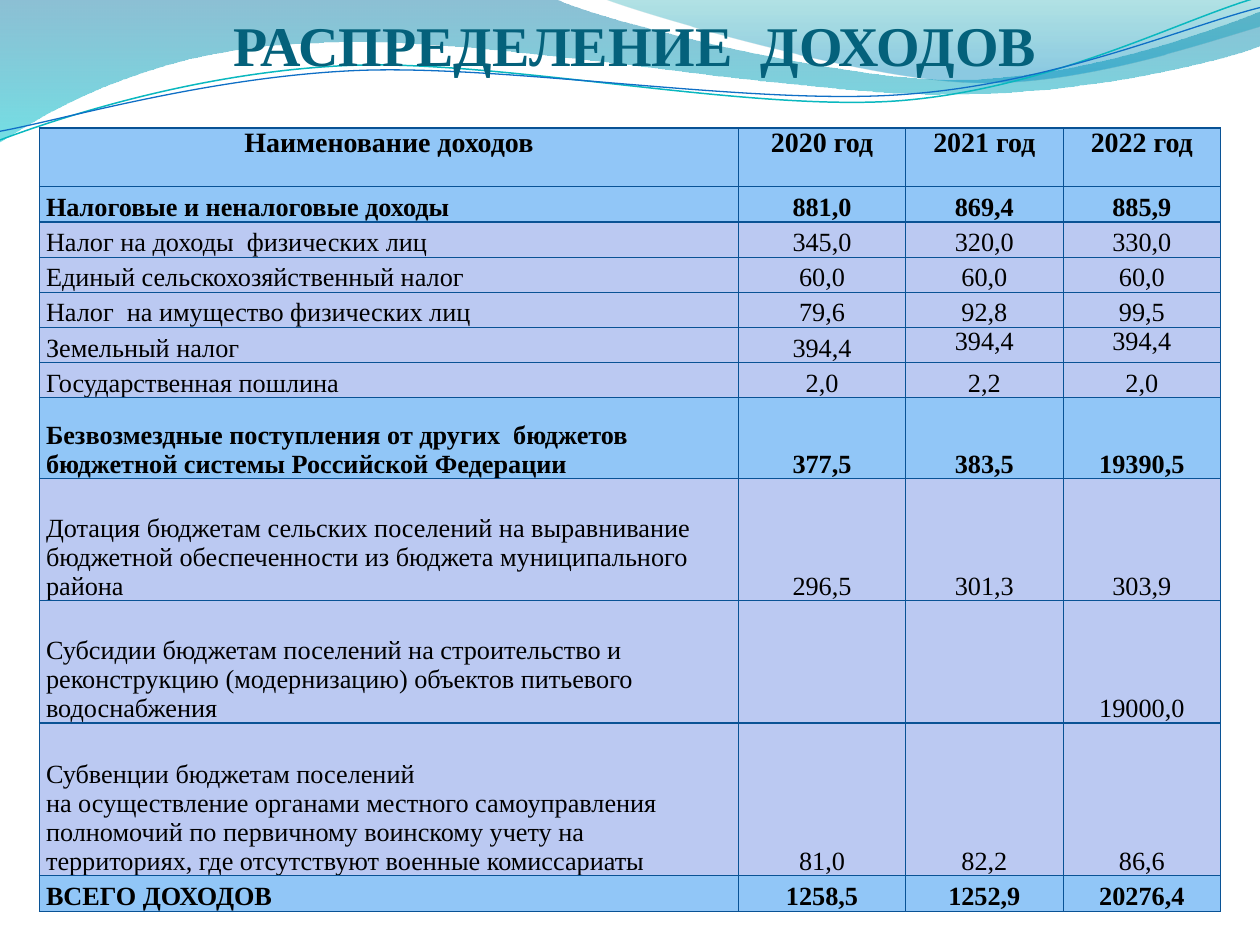
from math import cos, radians, sin

from lxml import etree
from pptx import Presentation
from pptx.dml.color import RGBColor
from pptx.enum.text import MSO_ANCHOR, MSO_AUTO_SIZE, PP_ALIGN
from pptx.oxml.ns import qn
from pptx.util import Pt

LEFT, CENTER = PP_ALIGN.LEFT, PP_ALIGN.CENTER
TOP, BOTTOM = MSO_ANCHOR.TOP, MSO_ANCHOR.BOTTOM
NO_AUTOFIT = MSO_AUTO_SIZE.NONE

FONT = "Times New Roman"
BLACK = RGBColor(0x00, 0x00, 0x00)
TITLE_TEAL = RGBColor(0x04, 0x61, 0x7B)
TOTAL_BLUE = RGBColor(0x91, 0xC6, 0xF7)
ITEM_BLUE = RGBColor(0xBB, 0xC9, 0xF2)
BORDER_BLUE = RGBColor(0x09, 0x52, 0x95)
WAVE_BLUE = RGBColor(0x00, 0x74, 0xA1)
WAVE_CYAN = RGBColor(0x00, 0xC6, 0xCF)
WAVE_TEAL = RGBColor(0x00, 0xA1, 0xA9)
WAVE_SKY = RGBColor(0x00, 0x8B, 0xBF)
LINE_TEAL = RGBColor(0x0A, 0xB8, 0xBF)
LINE_BLUE = RGBColor(0x0F, 0x6F, 0xC6)
LINE_TILT = 357.3

# Boxes and outlines in points: a pair is a straight step, six numbers a Bezier step.
# Gradient stops are (position, colour, opacity in percent).
WAVES = [
    ((-0.7, -0.7, 721.4, 82.1),
     [(0, 0), (317, -0.7), (343, 12, 478, 45.4, 546, 45.4),
      (614, 45.4, 690, 18.7, 720, 6.5), (720.7, 26),
      (708, 31.7, 626, 54.7, 537, 54), (448, 54, 275, 20, 185, 24.5),
      (93, 26, 33, 60, -0.7, 81.4)],
     [(0, WAVE_BLUE, 45), (1, WAVE_CYAN, 55)]),
    ((345, -0.7, 375, 50.4),
     [(345, -0.7), (366.5, 8, 491, 44.6, 553.7, 46.8),
      (616, 49.7, 692, 23, 720, 15), (720, 0)],
     [(0, WAVE_TEAL, 30), (0.8, WAVE_SKY, 45)]),
]
WAVE_LINES = [
    ((-1.4, 15.8, 721.4, 51.1),
     [(0, 80), (34.6, 67, 114, 41, 199.4, 37.4),
      (284.4, 33.8, 427, 64, 513.4, 57.6), (600, 51, 675.4, 10.8, 718.6, -1.4)],
     LINE_TEAL, 0.85),
    ((-1.4, 21.6, 722.2, 41.8),
     [(0, 75), (33.8, 69, 118, 44, 203.8, 40.3),
      (290, 36.7, 430, 60.5, 516, 54), (602, 48, 677.5, 15, 720, 4.3)],
     LINE_BLUE, 0.75),
]

COLUMN_WIDTHS = [399.5, 95.5, 90, 90]
LINE_ROW = 20.1
# (row height, shown as a total, texts)
ROWS = [
    (33.7, True, ["Наименование доходов", "2020 год", "2021 год", "2022 год"]),
    (LINE_ROW, True, ["Налоговые и неналоговые доходы", "881,0", "869,4", "885,9"]),
    (LINE_ROW, False, ["Налог на доходы  физических лиц", "345,0", "320,0", "330,0"]),
    (LINE_ROW, False, ["Единый сельскохозяйственный налог", "60,0", "60,0", "60,0"]),
    (LINE_ROW, False, ["Налог  на имущество физических лиц", "79,6", "92,8", "99,5"]),
    (LINE_ROW, False, ["Земельный налог", "394,4", "394,4", "394,4"]),
    (LINE_ROW, False, ["Государственная пошлина", "2,0", "2,2", "2,0"]),
    (46.2, True, ["Безвозмездные поступления от других  бюджетов "
                  "бюджетной системы Российской Федерации",
                  "377,5", "383,5", "19390,5"]),
    (69.8, False, ["Дотация бюджетам сельских поселений на выравнивание бюджетной "
                   "обеспеченности из бюджета муниципального района",
                   "296,5", "301,3", "303,9"]),
    (69.8, False, ["Субсидии бюджетам поселений на строительство и реконструкцию "
                   "(модернизацию) объектов питьевого водоснабжения",
                   "", "", "19000,0"]),
    (87.4, False, ["Субвенции бюджетам поселений\n"
                   "на осуществление органами местного самоуправления полномочий "
                   "по первичному воинскому учету на территориях, "
                   "где отсутствуют военные комиссариаты",
                   "81,0", "82,2", "86,6"]),
    (LINE_ROW, True, ["ВСЕГО ДОХОДОВ", "1258,5", "1252,9", "20276,4"]),
]
TOP_ANCHORED = {(0, column) for column in range(4)} | {(5, 2), (5, 3)}


def write_text(frame, text, size=15, color=BLACK, bold=False, align=LEFT):
    frame.text = text
    for paragraph in frame.paragraphs:
        paragraph.alignment = align
        for part in (paragraph, *paragraph.runs):
            part.font.name, part.font.size, part.font.bold = FONT, Pt(size), bold
            part.font.color.rgb = color


def to_local(point, box, rotation):
    """Move a slide point into the unrotated box of its shape."""
    left, top, width, height = box
    dx, dy = point[0] - left - width / 2, point[1] - top - height / 2
    angle = radians(-rotation)
    return (dx * cos(angle) - dy * sin(angle) + width / 2,
            dx * sin(angle) + dy * cos(angle) + height / 2)


def add_outline(slide, box, outline, close, rotation=0):
    """Add a freeform whose six-number steps become true Bezier curves."""
    builder = slide.shapes.build_freeform(*outline[0], scale=Pt(1))
    builder.add_line_segments([step[-2:] for step in outline[1:]], close=close)
    shape = builder.convert_to_shape()
    shape.left, shape.top, shape.width, shape.height = (Pt(side) for side in box)
    shape.rotation = rotation
    shape.shadow.inherit = False

    path = next(shape.element.iter(qn("a:path")))
    path.set("w", str(Pt(box[2])))
    path.set("h", str(Pt(box[3])))
    commands = [node for node in path if node.tag != qn("a:close")]
    for command, step in zip(commands, outline):
        for old_point in list(command):
            command.remove(old_point)
        if len(step) == 6:
            command = replace_with_curve(path, command)
        for i in range(0, len(step), 2):
            x, y = to_local(step[i:i + 2], box, rotation)
            etree.SubElement(command, qn("a:pt"), x=str(Pt(x)), y=str(Pt(y)))
    return shape


def replace_with_curve(path, command):
    curve = etree.SubElement(path, qn("a:cubicBezTo"))
    path.replace(command, curve)
    return curve


def add_wave(slide, box, outline, stops):
    wave = add_outline(slide, box, outline, close=True)
    wave.line.fill.background()
    wave.fill.gradient()
    wave.fill.gradient_angle = 270
    for stop, (position, color, _) in zip(wave.fill.gradient_stops, stops):
        stop.position = position
        stop.color.rgb = color
    colors = wave.element.spPr.iter(qn("a:srgbClr"))
    for color_element, (_, _, opacity) in zip(colors, stops):
        etree.SubElement(color_element, qn("a:alpha"), val=str(opacity * 1000))


def add_wave_line(slide, box, outline, color, width):
    line = add_outline(slide, box, outline, close=False, rotation=LINE_TILT)
    line.fill.background()
    line.line.color.rgb = color
    line.line.width = Pt(width)


def place_title(slide, text):
    title = slide.shapes.title
    title.left, title.top, title.width, title.height = Pt(36), Pt(16.6), Pt(654), Pt(28)
    frame = title.text_frame
    frame.margin_left = frame.margin_right = frame.margin_bottom = 0
    frame.margin_top = Pt(3.6)
    frame.word_wrap = True
    frame.auto_size = NO_AUTOFIT
    frame.vertical_anchor = BOTTOM
    write_text(frame, text, size=32, color=TITLE_TEAL, bold=True, align=CENTER)
    # Bring the title in front of the waves.
    title.element.getparent().append(title.element)


def add_borders(cell):
    properties = cell._tc.get_or_add_tcPr()
    for side in ("lnL", "lnR", "lnT", "lnB"):
        border = etree.SubElement(properties, qn("a:" + side), w=str(Pt(0.75)))
        fill = etree.SubElement(border, qn("a:solidFill"))
        etree.SubElement(fill, qn("a:srgbClr"), val=str(BORDER_BLUE))


def add_income_table(slide):
    heights = [height for height, _, _ in ROWS]
    table = slide.shapes.add_table(
        len(ROWS), len(COLUMN_WIDTHS), Pt(22.5), Pt(73.1),
        Pt(sum(COLUMN_WIDTHS)), Pt(sum(heights))).table
    for column, width in zip(table.columns, COLUMN_WIDTHS):
        column.width = Pt(width)
    for r, (height, is_total, texts) in enumerate(ROWS):
        table.rows[r].height = Pt(height)
        for c, text in enumerate(texts):
            cell = table.cell(r, c)
            cell.margin_left = cell.margin_right = Pt(3.8)
            cell.margin_top = cell.margin_bottom = 0
            cell.vertical_anchor = TOP if (r, c) in TOP_ANCHORED else BOTTOM
            add_borders(cell)
            cell.fill.solid()
            cell.fill.fore_color.rgb = TOTAL_BLUE if is_total else ITEM_BLUE
            write_text(cell.text_frame, text, size=16 if r == 0 else 15, bold=is_total,
                       align=LEFT if c == 0 and r > 0 else CENTER)


def main():
    presentation = Presentation()
    presentation.slide_width, presentation.slide_height = Pt(720), Pt(540)
    slide = presentation.slides.add_slide(presentation.slide_layouts[5])
    for wave in WAVES:
        add_wave(slide, *wave)
    for wave_line in WAVE_LINES:
        add_wave_line(slide, *wave_line)
    place_title(slide, "РАСПРЕДЕЛЕНИЕ  ДОХОДОВ")
    add_income_table(slide)
    presentation.save("out.pptx")


if __name__ == "__main__":
    main()
